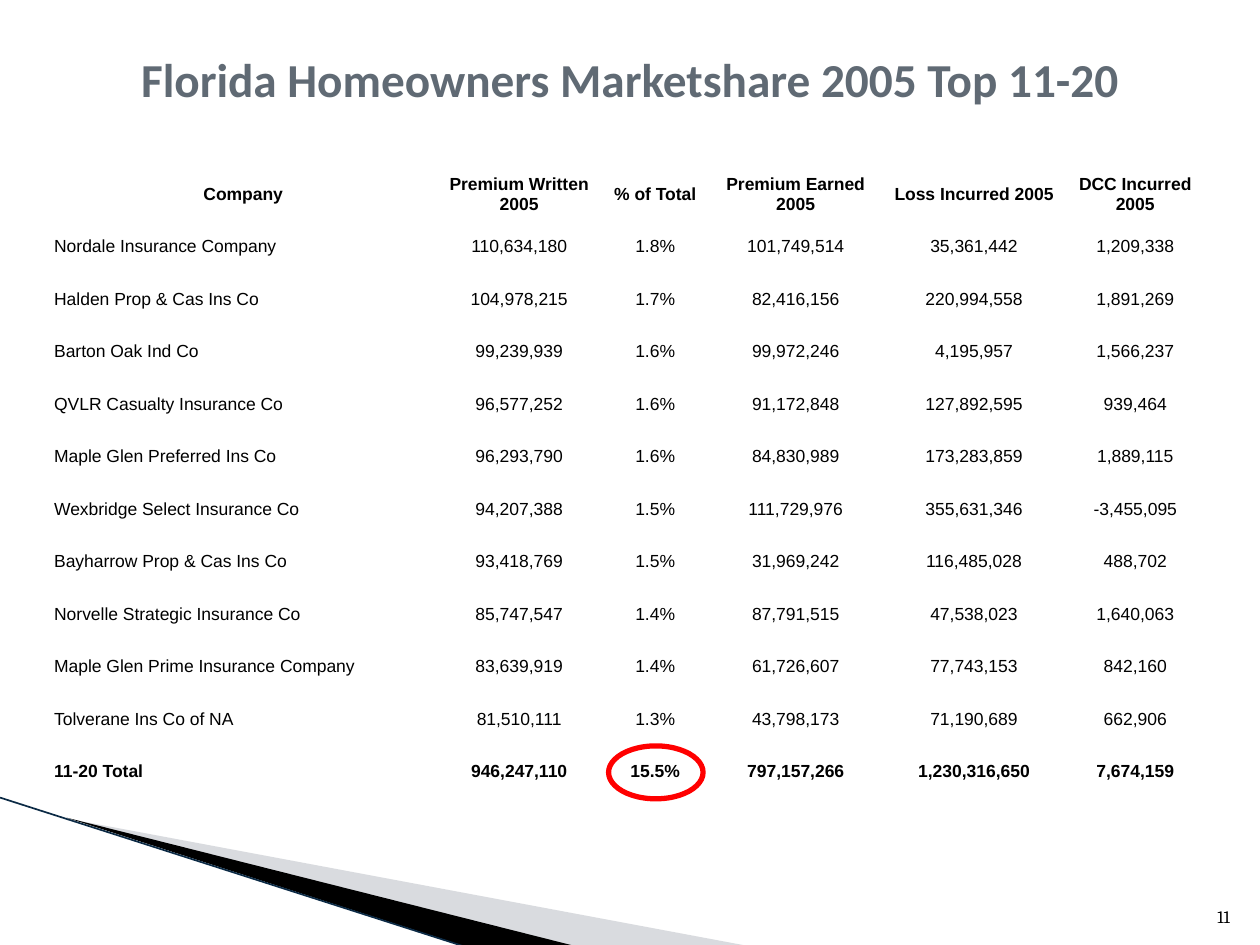
from lxml.etree import SubElement
from pptx import Presentation
from pptx.dml.color import RGBColor
from pptx.enum.shapes import MSO_CONNECTOR, MSO_SHAPE
from pptx.enum.text import MSO_ANCHOR, MSO_AUTO_SIZE, PP_ALIGN
from pptx.oxml.ns import qn
from pptx.util import Inches, Pt

BLACK = RGBColor(0x00, 0x00, 0x00)
SLATE = RGBColor(0x60, 0x6A, 0x74)
GRAY = RGBColor(0xA1, 0xA6, 0xAF)
NAVY = RGBColor(0x0B, 0x2A, 0x45)
RED = RGBColor(0xFF, 0x00, 0x00)

WIDTHS = [3.02, 1.36, 0.8, 1.43, 1.4, 1.16]
HEIGHT = 5.0
ROWS = [
    ("Company", "Premium Written 2005", "% of Total", "Premium Earned 2005",
     "Loss Incurred 2005", "DCC Incurred 2005"),
    ("Nordale Insurance Company", "110,634,180", "1.8%", "101,749,514", "35,361,442", "1,209,338"),
    ("Halden Prop & Cas Ins Co", "104,978,215", "1.7%", "82,416,156", "220,994,558", "1,891,269"),
    ("Barton Oak Ind Co", "99,239,939", "1.6%", "99,972,246", "4,195,957", "1,566,237"),
    ("QVLR Casualty Insurance Co", "96,577,252", "1.6%", "91,172,848", "127,892,595", "939,464"),
    ("Maple Glen Preferred Ins Co", "96,293,790", "1.6%", "84,830,989", "173,283,859", "1,889,115"),
    ("Wexbridge Select Insurance Co", "94,207,388", "1.5%", "111,729,976", "355,631,346", "-3,455,095"),
    ("Bayharrow Prop & Cas Ins Co", "93,418,769", "1.5%", "31,969,242", "116,485,028", "488,702"),
    ("Norvelle Strategic Insurance Co", "85,747,547", "1.4%", "87,791,515", "47,538,023", "1,640,063"),
    ("Maple Glen Prime Insurance Company", "83,639,919", "1.4%", "61,726,607", "77,743,153", "842,160"),
    ("Tolverane Ins Co of NA", "81,510,111", "1.3%", "43,798,173", "71,190,689", "662,906"),
    ("11-20 Total", "946,247,110", "15.5%", "797,157,266", "1,230,316,650", "7,674,159"),
]


def style(par, align, color, **format):
    par.alignment = align
    for name, value in format.items():
        setattr(par.font, name, value)
    par.font.color.rgb = color


def add_wedge(slide, points, color, alpha=None):
    start, *rest = [(Inches(x), Inches(y)) for x, y in points]
    build = slide.shapes.build_freeform(*start)
    build.add_line_segments(rest)
    wedge = build.convert_to_shape()
    wedge.shadow.inherit = False
    wedge.line.fill.background()
    wedge.fill.solid()
    wedge.fill.fore_color.rgb = color
    if alpha:
        tint = wedge.fill._xPr.find(qn("a:solidFill"))[0]
        SubElement(tint, qn("a:alpha"), val=str(alpha * 1000))


def add_edge(slide, start, end):
    ends = [Inches(v) for v in (*start, *end)]
    edge = slide.shapes.add_connector(MSO_CONNECTOR.STRAIGHT, *ends)
    edge.line.color.rgb = NAVY
    edge.line.width = Pt(0.95)
    SubElement(edge._element.spPr, qn("a:effectLst"))


def set_title(slide, text):
    title = slide.shapes.title
    title.left, title.top, title.width, title.height = (
        Inches(v) for v in (0, 0, 10, 1.25))
    frame = title.text_frame
    frame.text = text
    frame.auto_size = MSO_AUTO_SIZE.NONE
    frame.vertical_anchor = MSO_ANCHOR.MIDDLE
    for side in ("left", "top", "right", "bottom"):
        setattr(frame, f"margin_{side}", Inches(0.3))
    style(frame.paragraphs[0], PP_ALIGN.CENTER, SLATE,
          name="Calibri", size=Pt(27), bold=True)


def fill_cell(cell, text, align, bold):
    cell.text = text
    cell.fill.background()
    cell.vertical_anchor = MSO_ANCHOR.MIDDLE
    for side in ("left", "top", "right"):
        setattr(cell, f"margin_{side}", Inches(0.01))
    cell.margin_bottom = 0
    style(cell.text_frame.paragraphs[0], align, BLACK,
          name="Arial", size=Pt(10), bold=bold)


def add_grid(slide):
    table = slide.shapes.add_table(
        len(ROWS), len(WIDTHS), Inches(0.42), Inches(1.33),
        Inches(sum(WIDTHS)), Inches(HEIGHT)).table
    table.first_row = table.horz_banding = False
    for col, width in zip(table.columns, WIDTHS):
        col.width = Inches(width)
    last = len(ROWS) - 1
    for r, row in enumerate(ROWS):
        table.rows[r].height = Inches(HEIGHT / len(ROWS))
        for c, text in enumerate(row):
            left = c == 0 and r > 0
            fill_cell(table.cell(r, c), text,
                      PP_ALIGN.LEFT if left else PP_ALIGN.CENTER,
                      r in (0, last))


def add_number(slide, text):
    box = slide.shapes.add_textbox(
        Inches(9.46), Inches(7.01), Inches(0.4), Inches(0.4))
    frame = box.text_frame
    frame.word_wrap = True
    frame.vertical_anchor = MSO_ANCHOR.BOTTOM
    frame.text = text
    style(frame.paragraphs[0], PP_ALIGN.RIGHT, BLACK,
          name="Cambria", size=Pt(10))


def add_ring(slide):
    ring = slide.shapes.add_shape(
        MSO_SHAPE.OVAL, Inches(4.83), Inches(5.92), Inches(0.75), Inches(0.42))
    ring.shadow.inherit = False
    ring.fill.background()
    ring.line.color.rgb = RED
    ring.line.width = Pt(3)


def main():
    deck = Presentation()
    deck.slide_width, deck.slide_height = Inches(10), Inches(7.5)
    slide = deck.slides.add_slide(deck.slide_layouts[5])

    # Corner wedges
    add_wedge(slide, [(0.55, 6.5), (5.95, 7.51), (4.56, 7.51)], GRAY, 40)
    add_wedge(slide, [(0.53, 6.49), (4.57, 7.51), (3.72, 7.52)], BLACK)
    add_edge(slide, (0, 6.33), (3.71, 7.52))

    # Title, market table and page number
    set_title(slide, "Florida Homeowners Marketshare 2005 Top 11-20")
    add_grid(slide)
    add_number(slide, "11")

    # Ring around the total share
    add_ring(slide)
    deck.save("out.pptx")


if __name__ == "__main__":
    main()
